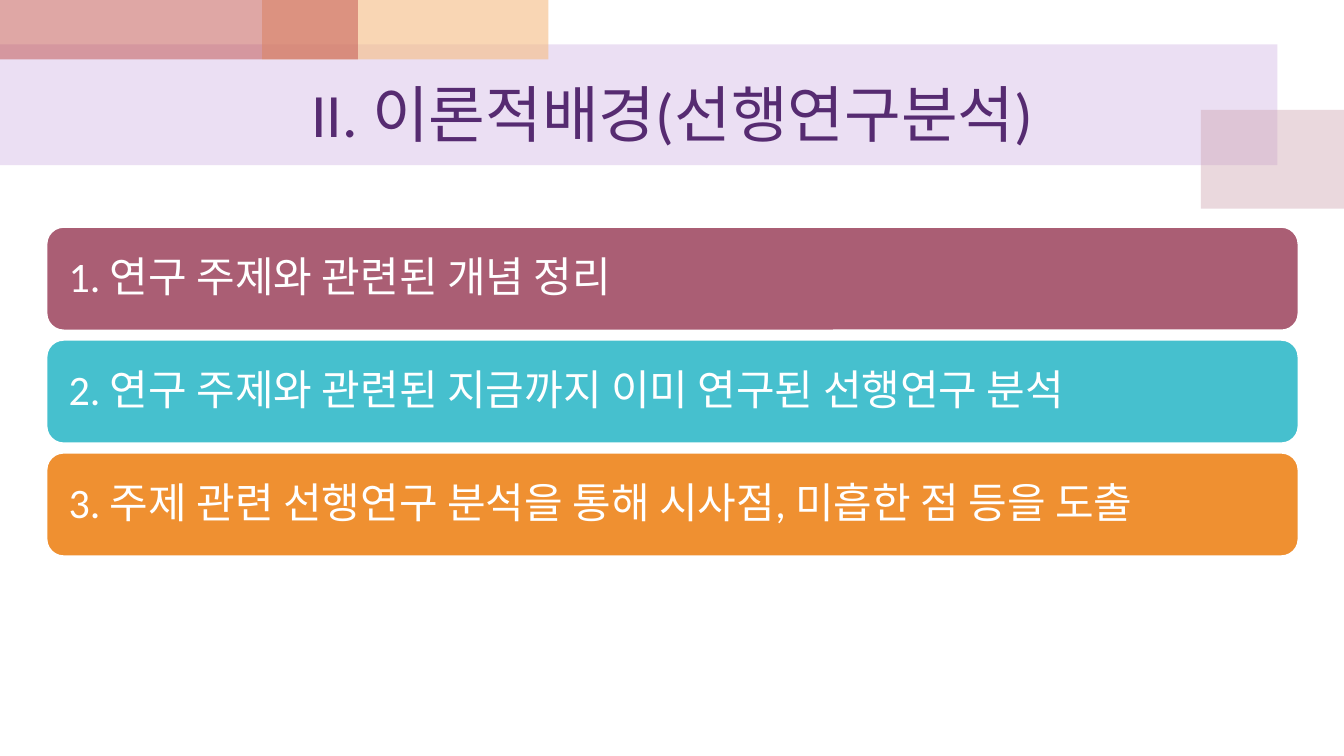
from dataclasses import dataclass

from lxml import etree
from pptx import Presentation
from pptx.dml.color import RGBColor
from pptx.enum.shapes import MSO_SHAPE
from pptx.enum.text import MSO_ANCHOR, PP_ALIGN
from pptx.oxml.ns import qn
from pptx.util import Inches, Pt

RECTANGLE = MSO_SHAPE.RECTANGLE
ROUNDED = MSO_SHAPE.ROUNDED_RECTANGLE
MIDDLE = MSO_ANCHOR.MIDDLE
LEFT, CENTER = PP_ALIGN.LEFT, PP_ALIGN.CENTER


@dataclass(frozen=True)
class Theme:
    font: str = "Calibri"
    title_size: int = 44
    item_size: int = 30
    title: str = "562B71"
    white: str = "FFFFFF"
    lilac: str = "BF98D8"
    pink: str = "CC9EAC"
    peach: str = "F5BC83"
    red: str = "C0504D"
    plum: str = "AA5E74"
    teal: str = "46C0CE"
    orange: str = "EF9031"


THEME = Theme()
TITLE = "II. 이론적배경(선행연구분석)"
TITLE_AREA = (0.67, 0.59, 12, 1.05)
# left, top, width, height, colour, opacity in percent
BANDS = [
    (0, 0.44, 12.67, 1.2, THEME.lilac, 30),
    (11.91, 1.09, 1.43, 0.98, THEME.pink, 40),
    (2.6, 0, 2.84, 0.59, THEME.peach, 60),
    (0, 0, 3.55, 0.59, THEME.red, 50),
]
ITEMS = [
    ("1. 연구 주제와 관련된 개념 정리", THEME.plum),
    ("2. 연구 주제와 관련된 지금까지 이미 연구된 선행연구 분석", THEME.teal),
    ("3. 주제 관련 선행연구 분석을 통해 시사점, 미흡한 점 등을 도출", THEME.orange),
]
ITEM_LEFT, ITEM_TOP, ITEM_WIDTH, ITEM_HEIGHT = 0.46, 2.25, 12.42, 1.03
ITEM_STEP = 1.12
ITEM_INSET = 0.17


def add_filled_shape(page, kind, area, color):
    shape = page.shapes.add_shape(kind, *map(Inches, area))
    shape.shadow.inherit = False
    shape.fill.solid()
    shape.fill.fore_color.rgb = RGBColor.from_string(color)
    return shape


def add_band(page, area, color, opacity):
    band = add_filled_shape(page, RECTANGLE, area, color)
    band.line.fill.background()
    color_node = band.fill._xPr.find(qn("a:solidFill"))[0]
    etree.SubElement(color_node, qn("a:alpha"), val=str(opacity * 1000))


def write_text(box, text, size, color, alignment):
    frame = box.text_frame
    frame.word_wrap = True
    frame.vertical_anchor = MIDDLE
    para = frame.paragraphs[0]
    para.text = text
    para.alignment = alignment
    para.font.name = THEME.font
    para.font.size = Pt(size)
    para.font.color.rgb = RGBColor.from_string(color)
    return frame


def add_item(page, index, text, color):
    area = (ITEM_LEFT, ITEM_TOP + index * ITEM_STEP, ITEM_WIDTH, ITEM_HEIGHT)
    bar = add_filled_shape(page, ROUNDED, area, color)
    bar.line.color.rgb = RGBColor.from_string(THEME.white)
    bar.line.width = Pt(1.5)
    frame = write_text(bar, text, THEME.item_size, THEME.white, LEFT)
    frame.margin_left = frame.margin_right = Inches(ITEM_INSET)
    frame.paragraphs[0].line_spacing = 0.9


def main():
    deck = Presentation()
    deck.slide_width, deck.slide_height = Inches(13.33), Inches(7.5)
    page = deck.slides.add_slide(deck.slide_layouts[6])
    for *area, color, opacity in BANDS:
        add_band(page, area, color, opacity)
    title_box = page.shapes.add_textbox(*map(Inches, TITLE_AREA))
    write_text(title_box, TITLE, THEME.title_size, THEME.title, CENTER)
    for index, (text, color) in enumerate(ITEMS):
        add_item(page, index, text, color)
    deck.save("out.pptx")


if __name__ == "__main__":
    main()
